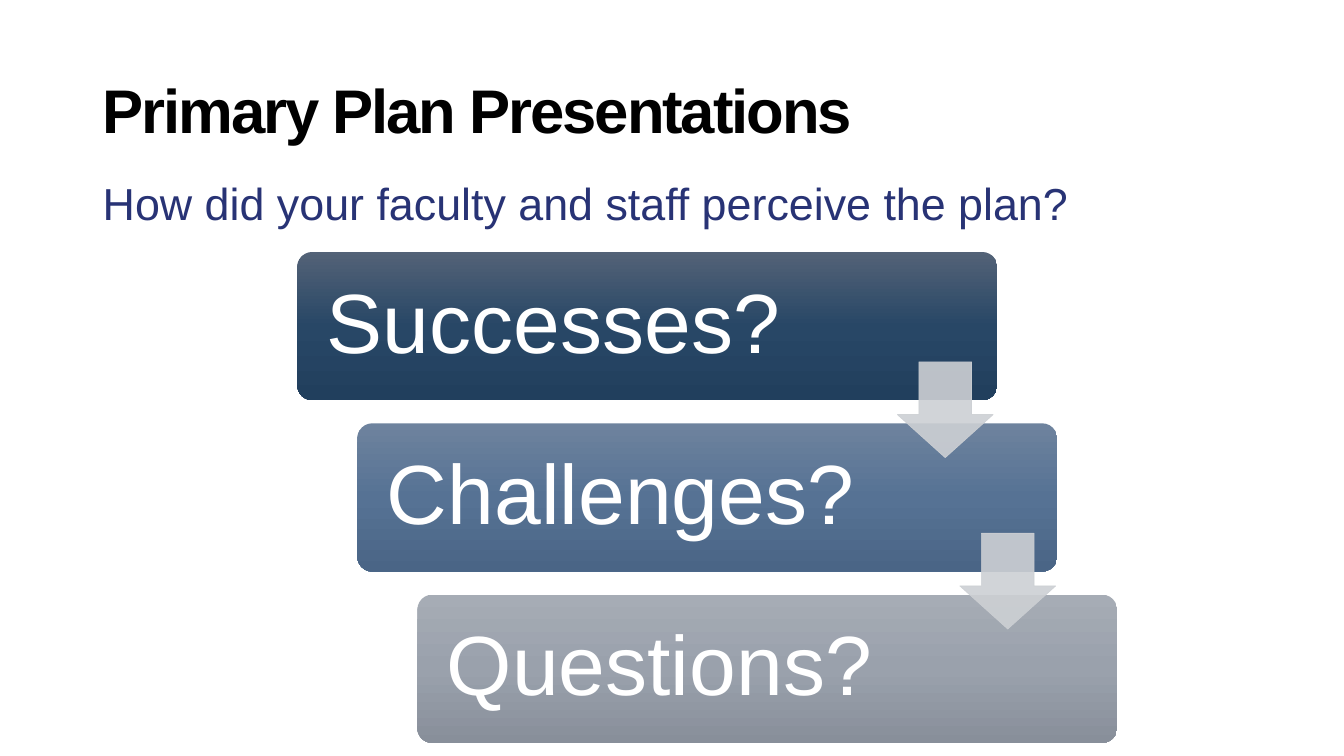
from copy import deepcopy

from lxml import etree
from pptx import Presentation
from pptx.dml.color import RGBColor
from pptx.enum.shapes import MSO_SHAPE
from pptx.enum.text import MSO_ANCHOR, MSO_AUTO_SIZE, PP_ALIGN
from pptx.oxml.ns import qn
from pptx.util import Inches, Pt

ROUND, DOWN = MSO_SHAPE.ROUNDED_RECTANGLE, MSO_SHAPE.DOWN_ARROW
LEFT, TOP, MID = PP_ALIGN.LEFT, MSO_ANCHOR.TOP, MSO_ANCHOR.MIDDLE
NO_FIT = MSO_AUTO_SIZE.NONE

COLORS = {"title": "000000", "body": "283375", "step": "FFFFFF", "arrow": "CDD0D4"}
STEPS = [
    ("Successes?", ("536277", "284766", "213F5D")),
    ("Challenges?", ("6E839E", "567294", "4A6586")),
    ("Questions?", ("A6ACB5", "9AA1AC", "888F9A")),
]


def rgb(name):
    return RGBColor.from_string(COLORS[name])


def place(shape, box):
    shape.left, shape.top, shape.width, shape.height = map(Inches, box)


def write(shape, text, size, color, anchor, bold=False):
    frame = shape.text_frame
    frame.text = text
    frame.word_wrap = True
    frame.auto_size = NO_FIT
    frame.vertical_anchor = anchor
    para = frame.paragraphs[0]
    para.alignment = LEFT
    para.line_spacing = 0.9
    para.space_before = Pt(0)
    font = para.font
    font.name, font.size, font.bold = "Arial", Pt(size), bold
    font.color.rgb = rgb(color)
    return frame


def add_title(slide, box):
    title = slide.shapes.title
    place(title, box)
    frame = write(title, "Primary Plan Presentations", 44, "title", MID, True)
    # Tighter letter spacing
    frame.paragraphs[0].runs[0]._r.get_or_add_rPr().set("spc", "-150")


def add_body(slide, box):
    body = slide.shapes.add_textbox(*map(Inches, box))
    write(body, "How did your faculty and staff perceive the plan?", 32, "body", TOP)


def shade(shape, stops):
    fill = shape.fill
    fill.gradient()
    fill.gradient_angle = 270
    # Add a middle stop to the default two
    first = next(shape._element.iter(qn("a:gs")))
    first.addnext(deepcopy(first))
    for i, (stop, color) in enumerate(zip(fill.gradient_stops, stops)):
        stop.position = i / 2
        stop.color.rgb = RGBColor.from_string(color)


def add_step(slide, box, text, stops):
    step = slide.shapes.add_shape(ROUND, *map(Inches, box))
    step.adjustments[0] = 0.1
    step.shadow.inherit = False
    step.line.fill.background()
    shade(step, stops)
    frame = write(step, text, 60, "step", MID)
    frame.margin_left = frame.margin_right = Inches(0.25)
    frame.margin_top = frame.margin_bottom = Inches(0.25)


def add_arrow(slide, box):
    arrow = slide.shapes.add_shape(DOWN, *map(Inches, box))
    arrow.adjustments[0], arrow.adjustments[1] = 0.55, 0.45
    arrow.shadow.inherit = False
    arrow.fill.solid()
    arrow.fill.fore_color.rgb = rgb("arrow")
    arrow.line.color.rgb = rgb("arrow")
    arrow.line.width = Pt(0.5)
    # Slight transparency on fill and line
    for color in arrow._element.spPr.iter(qn("a:srgbClr")):
        etree.SubElement(color, qn("a:alpha")).set("val", "90000")


def add_steps(slide, box):
    left, top, width, height = box
    wide, high, size = 6.94, 1.47, 0.95
    last = len(STEPS) - 1
    dx, dy = (width - wide) / last, (height - high) / last
    for i, (text, stops) in enumerate(STEPS):
        add_step(slide, (left + i * dx, top + i * dy, wide, high), text, stops)
    # Arrows overlap each pair of steps
    for i in range(last):
        add_arrow(slide, (left + 5.95 + i * 0.62, top + 1.09 + i * dy, size, size))


def main():
    deck = Presentation()
    deck.slide_width, deck.slide_height = Inches(13.33), Inches(7.5)
    slide = deck.slides.add_slide(deck.slide_layouts[5])
    add_title(slide, (0.92, 0.4, 11.5, 1.45))
    add_body(slide, (0.92, 1.75, 11.5, 4.76))
    add_steps(slide, (2.95, 2.5, 8.13, 4.87))
    deck.save("out.pptx")


if __name__ == "__main__":
    main()
